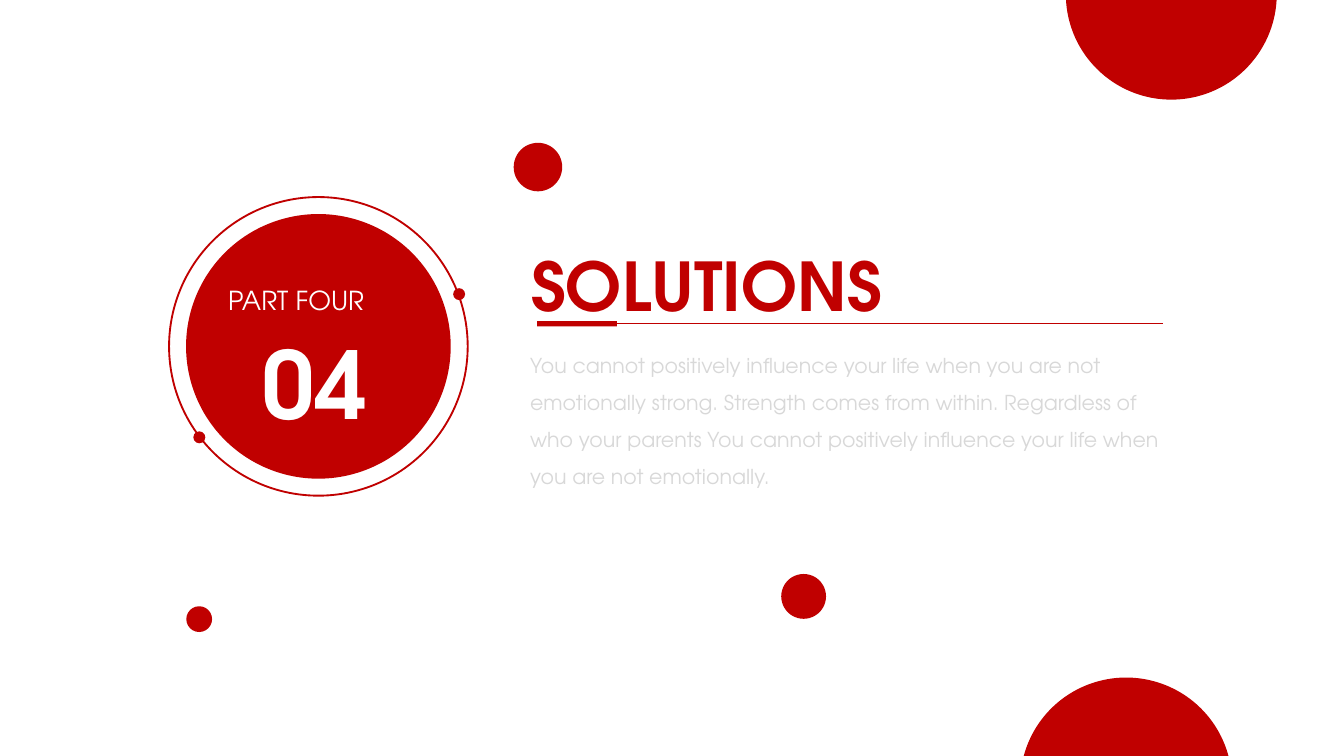
from lxml import etree
from pptx import Presentation
from pptx.dml.color import RGBColor
from pptx.enum.shapes import MSO_CONNECTOR, MSO_SHAPE
from pptx.enum.text import MSO_ANCHOR, MSO_AUTO_SIZE, PP_ALIGN
from pptx.oxml.ns import qn
from pptx.util import Pt

OVAL, RECTANGLE = MSO_SHAPE.OVAL, MSO_SHAPE.RECTANGLE
STRAIGHT = MSO_CONNECTOR.STRAIGHT
JUSTIFY, LEFT = PP_ALIGN.JUSTIFY, PP_ALIGN.LEFT
RIGHT_SIDE = 3
FONT = "TeX Gyre Adventor"
COLORS = {"red": "C00000", "white": "FFFFFF", "grey": "D8D8D8"}
RGB = {name: RGBColor.from_string(value) for name, value in COLORS.items()}

prs = Presentation()
prs.slide_width, prs.slide_height = Pt(720), Pt(405)
slide = prs.slides.add_slide(prs.slide_layouts[1])
shapes = slide.shapes


def add_red_shape(kind, left, top, width, height):
    shape = shapes.add_shape(kind, Pt(left), Pt(top), Pt(width), Pt(height))
    shape.shadow.inherit = False
    shape.fill.solid()
    shape.fill.fore_color.rgb = RGB["red"]
    shape.line.fill.background()
    return shape


def write(box, place, text, size, color, bold=False, align=JUSTIFY):
    """Place a box and fill it with one formatted paragraph."""
    box.left, box.top, box.width, box.height = map(Pt, place)
    frame = box.text_frame
    frame.word_wrap = True
    frame.auto_size = MSO_AUTO_SIZE.NONE
    frame.vertical_anchor = MSO_ANCHOR.TOP
    frame.margin_left = frame.margin_right = Pt(5.2)
    frame.margin_top = frame.margin_bottom = Pt(2.6)
    frame.text = text
    paragraph = frame.paragraphs[0]
    paragraph.alignment = align
    paragraph.space_before = Pt(0)
    font = paragraph.runs[0].font
    font.name, font.size, font.bold = FONT, Pt(size), bold
    font.color.rgb = RGB[color]
    return paragraph


# Scattered circles: left, top, diameter
for left, top, diameter in [
    (571, -59.6, 113),
    (546.5, 363, 113.6),
    (275.2, 76.5, 26),
    (418.5, 307.5, 24),
    (99.8, 324.8, 13.8),
]:
    add_red_shape(OVAL, left, top, diameter, diameter)

# Section badge: disc, ring around the same centre, two dots on the ring
center_x, center_y = 170.6, 185.6
for diameter in (141.8, 160):
    disc = add_red_shape(OVAL, center_x - diameter / 2, center_y - diameter / 2,
                         diameter, diameter)
ring = disc
ring.fill.background()
ring.line.color.rgb = RGB["red"]
ring.line.width = Pt(1)
for dot_x, dot_y in [(246, 157.6), (106.8, 234.3)]:
    add_red_shape(OVAL, dot_x - 3.2, dot_y - 3.2, 6.4, 6.4)

part_label = shapes.add_textbox(0, 0, 0, 0)
write(part_label, (117, 149.7, 108, 22.3), "PART FOUR", 14, "white")
part_number = shapes.add_textbox(0, 0, 0, 0)
write(part_number, (135.6, 172, 70, 65.5), "04", 50, "white", bold=True)

# Heading with its underline
write(shapes.title, (279.3, 128.3, 348, 49), "SOLUTIONS", 36, "red", bold=True)
accent = add_red_shape(RECTANGLE, 287.8, 172, 42.7, 2.8)
underline = shapes.add_connector(STRAIGHT, Pt(330.5), Pt(173.4), Pt(623.2), Pt(173.4))
underline.begin_connect(accent, RIGHT_SIDE)
underline.line.color.rgb = RGB["red"]
underline.line.width = Pt(0.75)
etree.SubElement(underline._element.spPr, qn("a:effectLst"))

# Description
description = write(
    slide.placeholders[1], (278.8, 180, 355, 105),
    "You cannot positively influence your life when you are not emotionally strong. "
    "Strength comes from within. Regardless of who your parents You cannot positively "
    "influence your life when you are not emotionally.",
    11, "grey", align=LEFT)
description.line_spacing = 1.5
properties = description._p.get_or_add_pPr()
properties.set("marL", "0")
properties.set("indent", "0")
etree.SubElement(properties, qn("a:buNone"))

prs.save("out.pptx")
